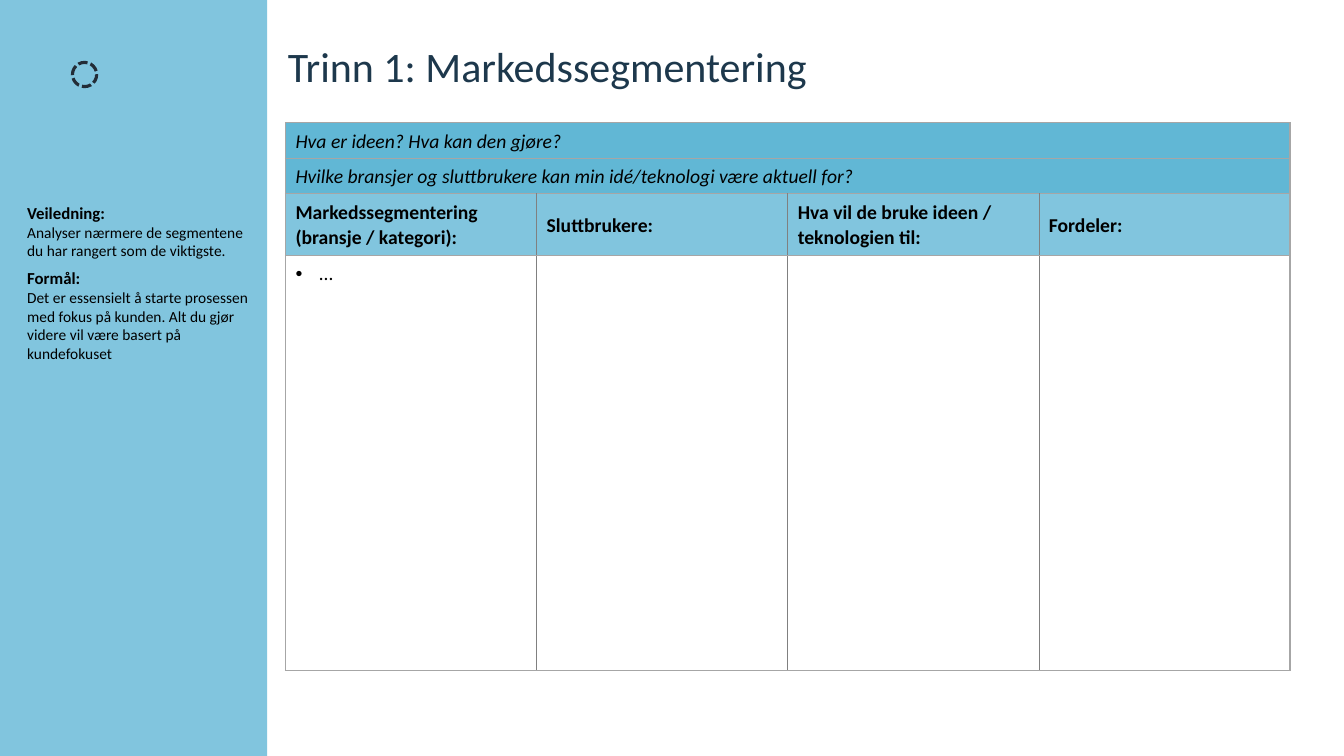
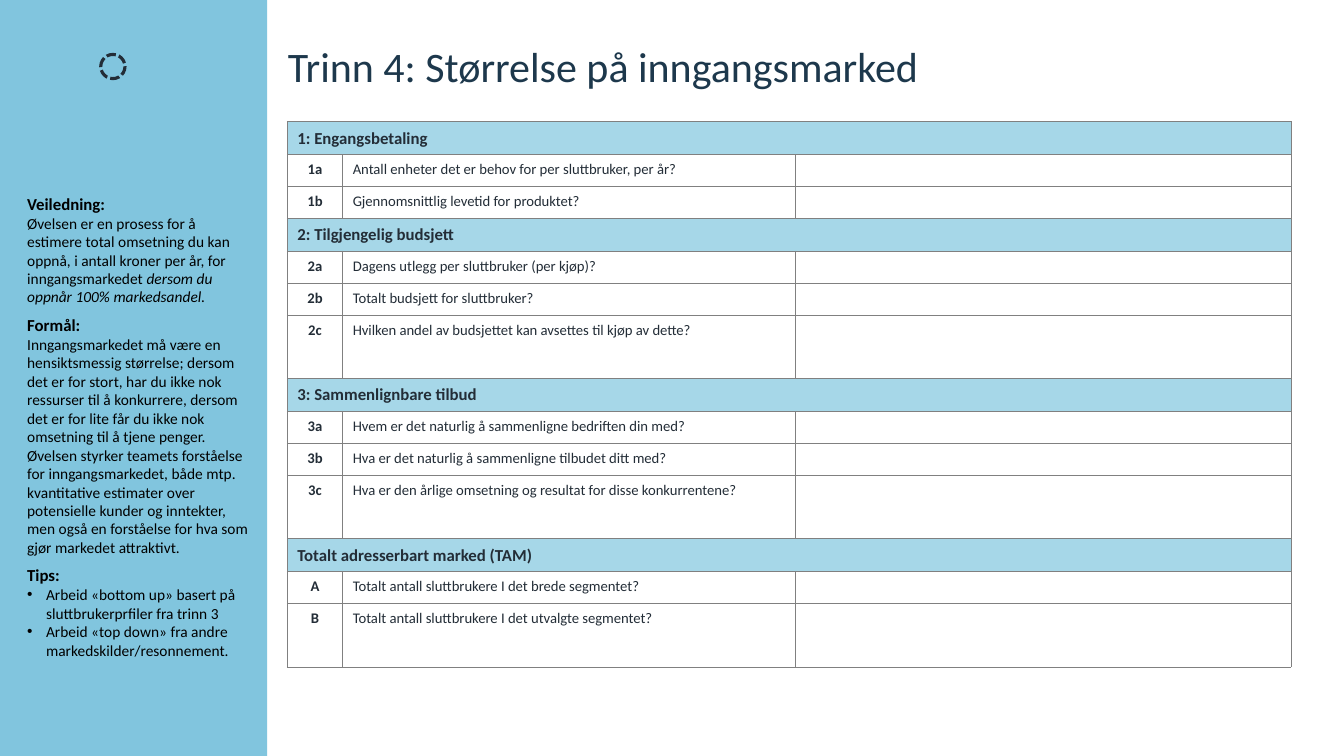
from lxml import etree
from pptx import Presentation
from pptx.dml.color import RGBColor
from pptx.enum.dml import MSO_LINE
from pptx.enum.shapes import MSO_SHAPE
from pptx.enum.text import MSO_ANCHOR, MSO_AUTO_SIZE, PP_ALIGN
from pptx.oxml.ns import qn
from pptx.util import Pt

RECTANGLE, OVAL = MSO_SHAPE.RECTANGLE, MSO_SHAPE.OVAL
TOP, MIDDLE = MSO_ANCHOR.TOP, MSO_ANCHOR.MIDDLE
LEFT, CENTER = PP_ALIGN.LEFT, PP_ALIGN.CENTER
NO_FIT, DASH = MSO_AUTO_SIZE.NONE, MSO_LINE.SQUARE_DOT

# Colours and text styles
BLACK, INK, NAVY = "000000", "232D37", "1D384C"
BAND, STRONG, PALE = "81C5DE", "61B7D5", "A6D7E8"
THIN, FRAME = ("808080", 0.5), ("A6A6A6", 1)
FONT = "Calibri"
STYLES = {
    "title": dict(size=30, color=NAVY),
    "heading": dict(size=12, color=BLACK, bold=True),
    "body": dict(size=11, color=BLACK),
    "emphasis": dict(size=11, color=BLACK, italic=True),
    "prompt": dict(size=14, color=BLACK, italic=True),
    "column": dict(size=14, color=BLACK, bold=True),
    "entry": dict(size=14, color=BLACK),
    "section": dict(size=12, color=INK, bold=True),
    "number": dict(size=10.5, color=INK, bold=True),
    "question": dict(size=10.5, color=INK),
}


def rgb(value):
    return RGBColor.from_string(value)


class Deck:
    def __init__(self, width, height):
        self.file = Presentation()
        self.file.slide_width, self.file.slide_height = Pt(width), Pt(height)
        self.height = height
        self.page = None

    def add_page(self, title, guidance, guidance_top, guidance_height, ring):
        """Start a slide with its title, side band, guidance and ring."""
        self.page = self.file.slides.add_slide(self.file.slide_layouts[1])
        self.band()
        self.title(title)
        self.guidance(guidance, guidance_top, guidance_height)
        self.ring(*ring)

    def place(self, box, left, top, width, height):
        places = dict(left=left, top=top, width=width, height=height)
        for name, value in places.items():
            setattr(box, name, Pt(value))

    def add_span(self, para, text, style, **layout):
        """Add a styled span, and set any paragraph layout values."""
        for name, value in layout.items():
            setattr(para, name, value)
        span = para.add_run()
        span.text = text
        span.font.name = FONT
        for name, value in STYLES[style].items():
            if name == "color":
                span.font.color.rgb = rgb(value)
            else:
                setattr(span.font, name, Pt(value) if name == "size" else value)

    def bullet(self, para, indent, mark="•"):
        """Set a hanging bullet, or no bullet when mark is empty."""
        props = para._p.get_or_add_pPr()
        props.set("marL", str(Pt(indent)))
        props.set("indent", str(-Pt(indent)))
        if mark:
            etree.SubElement(props, qn("a:buFont"), typeface="Arial")
            etree.SubElement(props, qn("a:buChar"), char=mark)
        else:
            etree.SubElement(props, qn("a:buNone"))

    def band(self):
        band = self.page.shapes.add_shape(RECTANGLE, 0, 0, Pt(190.8), Pt(self.height))
        band.shadow.inherit = False
        band.fill.solid()
        band.fill.fore_color.rgb = rgb(BAND)
        band.line.fill.background()
        self.page.shapes._spTree.insert(2, band._element)  # behind the text

    def ring(self, left, top):
        ring = self.page.shapes.add_shape(OVAL, Pt(left), Pt(top), Pt(17.3), Pt(17.3))
        ring.shadow.inherit = False
        ring.fill.background()
        ring.line.color.rgb = rgb(INK)
        ring.line.width = Pt(2.25)
        ring.line.dash_style = DASH

    def title(self, text):
        box = self.page.shapes.title
        self.place(box, 205.6, 33, 679.4, 65.5)
        frame = box.text_frame
        frame_format = dict(margin_left=0, margin_right=0, margin_top=0, margin_bottom=0,
                            vertical_anchor=TOP, word_wrap=True, auto_size=NO_FIT)
        for name, value in frame_format.items():
            setattr(frame, name, value)
        self.add_span(frame.paragraphs[0], text, "title", alignment=LEFT, line_spacing=0.9)

    def guidance(self, blocks, top, height):
        """Fill the body placeholder; a block is a kind, a text and emphasis."""
        box = self.page.placeholders[1]
        self.place(box, 12.2, top, 172.8, height)
        frame = box.text_frame
        for name, value in dict(vertical_anchor=TOP, word_wrap=True, auto_size=NO_FIT).items():
            setattr(frame, name, value)
        for index, (kind, text, *emphasis) in enumerate(blocks):
            para = frame.add_paragraph() if index else frame.paragraphs[0]
            if kind == "bullet":
                self.bullet(para, 13.5)
            else:
                self.bullet(para, 0, "")
            self.add_span(para, text, "heading" if kind == "heading" else "body",
                          space_before=Pt(0), space_after=Pt(6 if kind == "body" else 0))
            for extra in emphasis:
                self.add_span(para, extra, "emphasis")

    def border(self, cell, sides):
        props = cell._tc.get_or_add_tcPr()
        for side, (color, width) in sides.items():
            line = etree.SubElement(props, qn("a:ln" + side), w=str(Pt(width)))
            fill = etree.SubElement(line, qn("a:solidFill"))
            etree.SubElement(fill, qn("a:srgbClr"), val=color)

    def table(self, left, top, widths, rows, frame_line, anchor, blank_size):
        """Rows are (height, fill, styles, texts); a lone text spans the row."""
        shape = self.page.shapes.add_table(len(rows), len(widths), Pt(left), Pt(top),
                                           Pt(sum(widths)), Pt(sum(row[0] for row in rows)))
        table = shape.table
        table.first_row = table.horz_banding = False
        for column, width in zip(table.columns, widths):
            column.width = Pt(width)
        last = len(widths) - 1
        for r, (height, fill, styles, texts) in enumerate(rows):
            table.rows[r].height = Pt(height)
            spanning = len(texts) == 1
            if spanning:
                table.cell(r, 0).merge(table.cell(r, last))
            for c in range(len(widths)):
                cell = table.cell(r, c)
                self.border(cell, {
                    "L": frame_line if spanning or c == 0 else THIN,
                    "R": frame_line if spanning or c == last else THIN,
                    "T": frame_line, "B": frame_line})
                if fill:
                    cell.fill.solid()
                    cell.fill.fore_color.rgb = rgb(fill)
                    cell.vertical_anchor = anchor
                else:
                    cell.fill.background()
                    cell.vertical_anchor = TOP
                para = cell.text_frame.paragraphs[0]
                text = texts[c] if c < len(texts) else ""
                if text:
                    style = styles[c]
                    if style == "entry":
                        self.bullet(para, 17)
                    self.add_span(para, text, style, line_spacing=1.07,
                                  alignment=CENTER if style == "number" else LEFT)
                else:
                    etree.SubElement(para._p, qn("a:endParaRPr"), sz=str(int(blank_size * 100)))


def segmentation_page(deck):
    deck.add_page("Trinn 1: Markedssegmentering", [
        ("heading", "Veiledning:"),
        ("body", "Analyser nærmere de segmentene du har rangert som de viktigste."),
        ("heading", "Formål:"),
        ("body", "Det er essensielt å starte prosessen med fokus på kunden. Alt du gjør "
                 "videre vil være basert på kundefokuset"),
    ], 141.1, 122.4, (51.8, 44.6))
    rows = [
        (25.4, STRONG, ["prompt"], ["Hva er ideen? Hva kan den gjøre?"]),
        (25.4, STRONG, ["prompt"],
         ["Hvilke bransjer og sluttbrukere kan min idé/teknologi være aktuell for?"]),
        (43.8, BAND, ["column"] * 4,
         ["Markedssegmentering (bransje / kategori):", "Sluttbrukere:",
          "Hva vil de bruke ideen / teknologien til:", "Fordeler:"]),
        (296.6, None, ["entry"], ["…", "", "", ""]),
    ]
    deck.table(203.9, 87.6, [179.4] * 4, rows, FRAME, MIDDLE, 14)


def market_size_page(deck):
    deck.add_page("Trinn 4: Størrelse på inngangsmarked", [
        ("heading", "Veiledning:"),
        ("body", "Øvelsen er en prosess for å estimere total omsetning du kan oppnå, i antall "
                 "kroner per år, for inngangsmarkedet ", "dersom du oppnår 100% markedsandel."),
        ("heading", "Formål:"),
        ("body", "Inngangsmarkedet må være en hensiktsmessig størrelse; dersom det er for "
                 "stort, har du ikke nok ressurser til å konkurrere, dersom det er for lite "
                 "får du ikke nok omsetning til å tjene penger. Øvelsen styrker teamets "
                 "forståelse for inngangsmarkedet, både mtp. kvantitative estimater over "
                 "potensielle kunder og inntekter, men også en forståelse for hva som gjør "
                 "markedet attraktivt."),
        ("heading", "Tips:"),
        ("bullet", "Arbeid «bottom up» basert på sluttbrukerprfiler fra trinn 3"),
        ("bullet", "Arbeid «top down» fra andre markedskilder/resonnement."),
    ], 134.6, 356.4, (72, 38.9))
    sections = [
        ("1: Engangsbetaling", [
            ("1a", "Antall enheter det er behov for per sluttbruker, per år?"),
            ("1b", "Gjennomsnittlig levetid for produktet?")]),
        ("2: Tilgjengelig budsjett", [
            ("2a", "Dagens utlegg per sluttbruker (per kjøp)?"),
            ("2b", "Totalt budsjett for sluttbruker?"),
            ("2c", "Hvilken andel av budsjettet kan avsettes til kjøp av dette?")]),
        ("3: Sammenlignbare tilbud", [
            ("3a", "Hvem er det naturlig å sammenligne bedriften din med?"),
            ("3b", "Hva er det naturlig å sammenligne tilbudet ditt med?"),
            ("3c", "Hva er den årlige omsetning og resultat for disse konkurrentene?")]),
        ("Totalt adresserbart marked (TAM)", [
            ("A", "Totalt antall sluttbrukere I det brede segmentet?"),
            ("B", "Totalt antall sluttbrukere I det utvalgte segmentet?")]),
    ]
    tall = {"2c", "3c", "B"}
    rows = []
    for heading, questions in sections:
        rows.append((23.5, PALE, ["section"], [heading]))
        for number, question in questions:
            rows.append((45.3 if number in tall else 22.8, None,
                         ["number", "question"], [number, question, ""]))
    deck.table(205.2, 86.9, [39.6, 323.3, 354.2], rows, THIN, TOP, 10.5)


def main():
    deck = Deck(960, 540)
    segmentation_page(deck)
    market_size_page(deck)
    deck.file.save("out.pptx")


if __name__ == "__main__":
    main()
